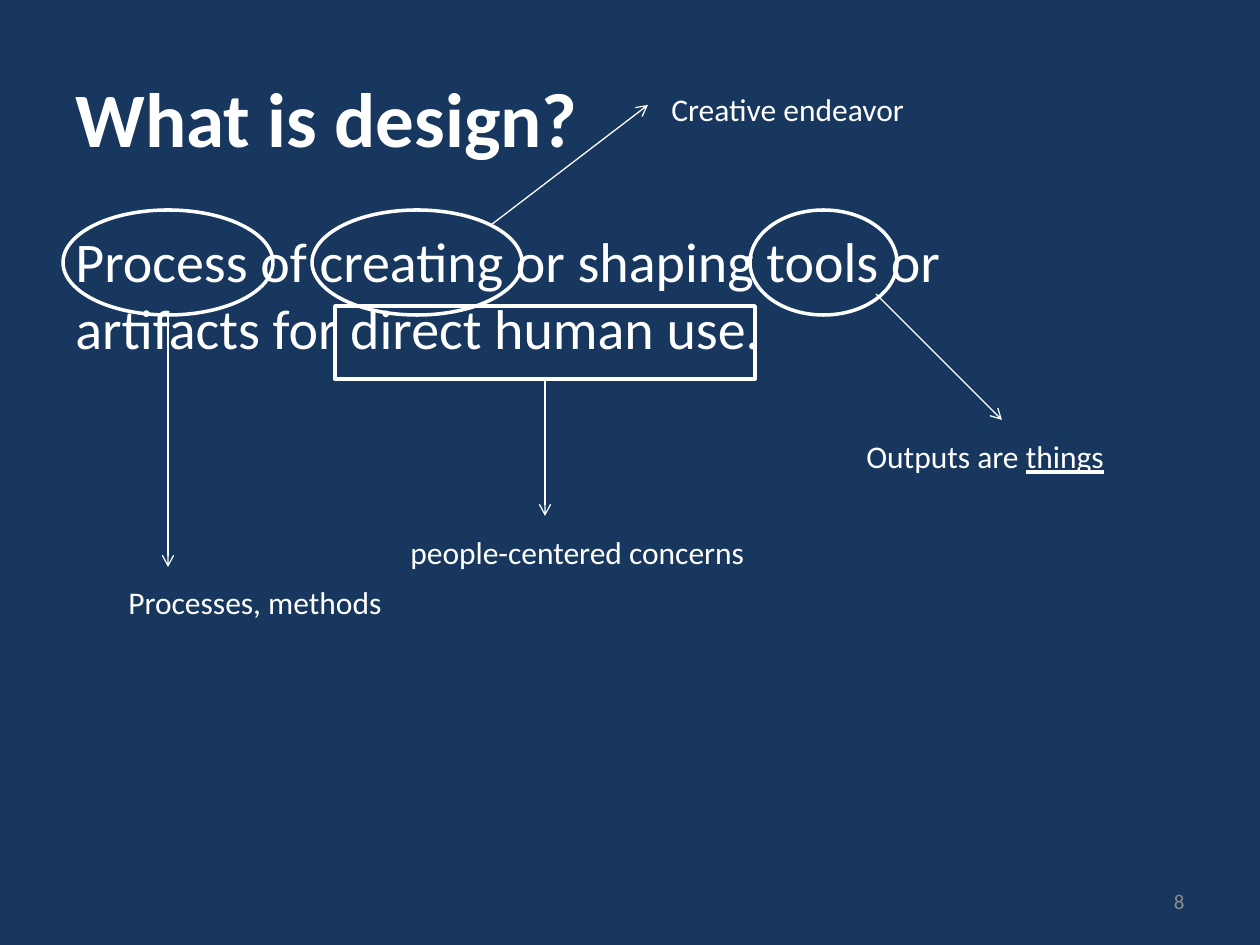
from lxml import etree
from pptx import Presentation
from pptx.dml.color import RGBColor
from pptx.enum.shapes import MSO_CONNECTOR as Connector, MSO_SHAPE as Shape
from pptx.enum.text import MSO_ANCHOR as Anchor, MSO_AUTO_SIZE as AutoSize, PP_ALIGN as Align
from pptx.oxml.ns import qn
from pptx.util import Emu, Pt


def px(length):
    return Emu(round(length * 914400 / 126))


def color(value):
    return RGBColor.from_string(value)


class Sketch:
    font = "Calibri"
    ink = "FFFFFF"
    muted = "8C8C8C"
    paper = "17375E"
    bottom = 2

    def __init__(self, deck):
        self.slide = deck.slides.add_slide(deck.slide_layouts[6])
        fill = self.slide.background.fill
        fill.solid()
        fill.fore_color.rgb = color(self.paper)
        self.shapes = self.slide.shapes

    def start_group(self):
        self.shapes = self.slide.shapes.add_group_shape().shapes

    def text(self, at, words, size, ink=ink, bold=False, anchor=Anchor.TOP,
             align=Align.LEFT, wrap=True, underlined=""):
        box = self.shapes.add_textbox(*map(px, at))
        frame = box.text_frame
        frame.word_wrap = wrap
        frame.auto_size = AutoSize.NONE if wrap else AutoSize.SHAPE_TO_FIT_TEXT
        frame.vertical_anchor = anchor
        para = frame.paragraphs[0]
        para.alignment = align
        para.font.name = self.font
        para.font.size = Pt(size)
        para.font.bold = bold
        para.font.color.rgb = color(ink)
        para.add_run().text = words
        if underlined:
            span = para.add_run()
            span.text = underlined
            span.font.underline = True

    def label(self, at, words, underlined=""):
        self.text(at, words, 18, wrap=False, underlined=underlined)

    def outline(self, kind, at):
        shape = self.shapes.add_shape(kind, *map(px, at))
        shape.shadow.inherit = False
        shape.fill.background()
        shape.line.color.rgb = color(self.ink)
        shape.line.width = Pt(2)
        return shape

    def arrow(self, start, end, source=None):
        line = self.shapes.add_connector(Connector.STRAIGHT, *map(px, start + end))
        if source is not None:
            line.begin_connect(source, self.bottom)
        line.line.color.rgb = color(self.ink)
        line.line.width = Pt(0.75)
        etree.SubElement(line.line._get_or_add_ln(), qn("a:tailEnd"), type="arrow")
        etree.SubElement(line._element.spPr, qn("a:effectLst"))


def main():
    deck = Presentation()
    deck.slide_width, deck.slide_height = px(1260), px(945)
    sketch = Sketch(deck)

    sketch.text((63, 38, 1134, 157), "What is design?", 44, bold=True, anchor=Anchor.MIDDLE)
    sketch.text((63, 220, 956, 624),
                "Process of creating or shaping tools or artifacts for direct human use.", 32)
    sketch.text((903, 876, 294, 50), "8", 12, ink=sketch.muted,
                anchor=Anchor.MIDDLE, align=Align.RIGHT)

    circled_words = [
        (63, 210, (168, 315), (168, 567), (116, 577, 281, 50), "Processes, methods", ""),
        (312, 210, (491, 225), (648, 105), (659, 84, 261, 50), "Creative endeavor", ""),
        (750, 147, (876, 294), (1002, 420), (854, 431, 266, 50), "Outputs are ", "things"),
    ]
    for left, width, start, end, place, words, underlined in circled_words:
        sketch.start_group()
        sketch.outline(Shape.OVAL, (left, 210, width, 105))
        sketch.arrow(start, end)
        sketch.label(place, words, underlined)

    sketch.start_group()
    human_use = sketch.outline(Shape.RECTANGLE, (335, 306, 420, 73))
    sketch.label((398, 527, 364, 50), "people-centered concerns")
    sketch.arrow((545, 379), (545, 516), human_use)

    deck.save("out.pptx")


if __name__ == "__main__":
    main()
